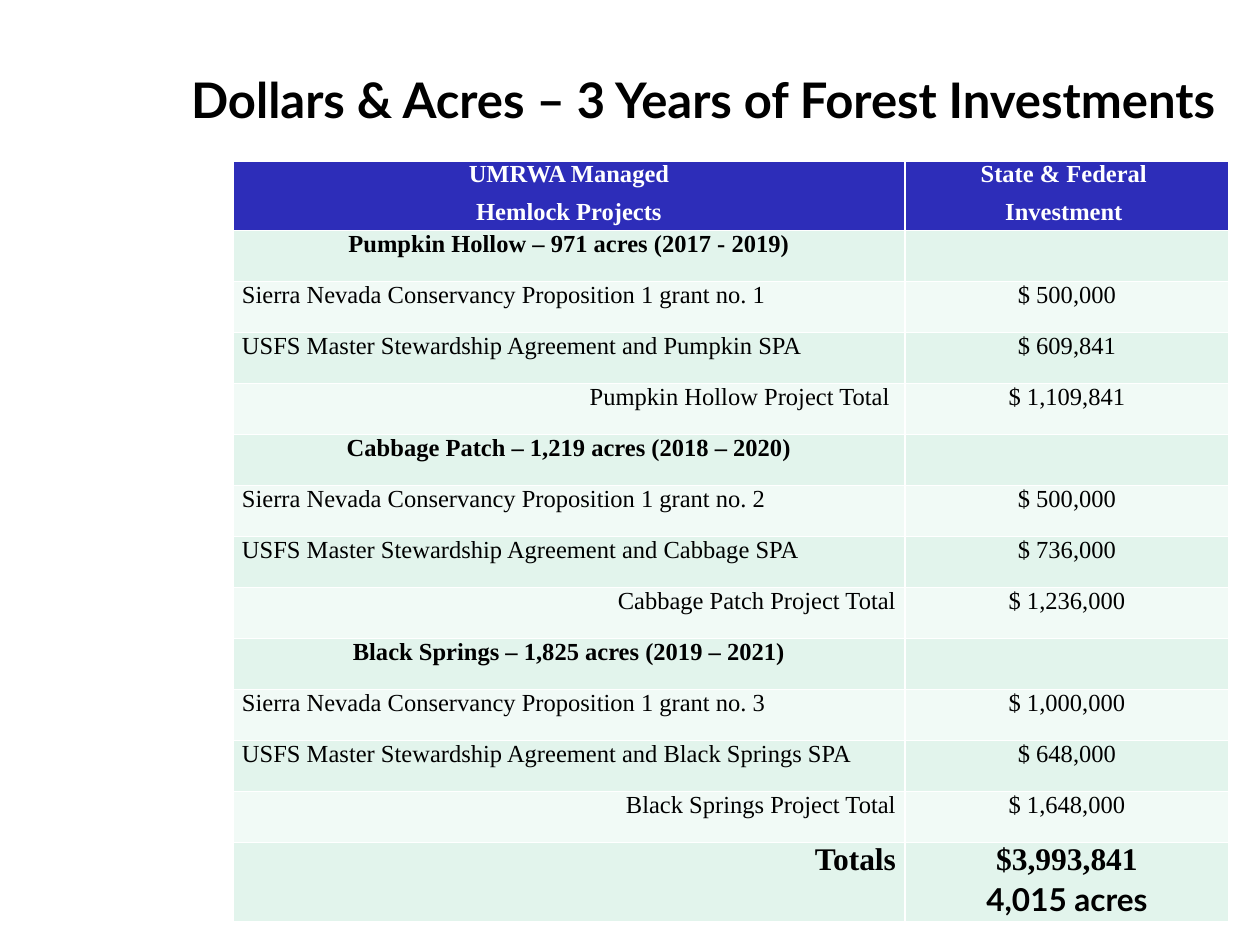
from pptx import Presentation
from pptx.dml.color import RGBColor
from pptx.enum.text import MSO_ANCHOR, PP_ALIGN as ALIGN
from pptx.util import Pt

PX = 914400 // 126
BLACK = RGBColor(0, 0, 0)
WHITE = RGBColor(255, 255, 255)
BLUE = RGBColor(0x2D, 0x2D, 0xB9)
MINT = RGBColor(0xE2, 0xF4, 0xEC)
PALE_MINT = RGBColor(0xF1, 0xFA, 0xF6)
SERIF = "Times New Roman"
SANS = "Lato"

PROJECTS = [
    ("Pumpkin Hollow – 971 acres (2017 - 2019)", "1", "$ 500,000",
     "Pumpkin", "$ 609,841", "Pumpkin Hollow Project Total ", "$ 1,109,841"),
    ("Cabbage Patch – 1,219 acres (2018 – 2020)", "2", "$ 500,000",
     "Cabbage", "$ 736,000", "Cabbage Patch Project Total", "$ 1,236,000"),
    ("Black Springs – 1,825 acres (2019 – 2021)", "3", "$ 1,000,000",
     "Black Springs", "$ 648,000", "Black Springs Project Total", "$ 1,648,000"),
]


def style(paragraph, align, size, bold, color=BLACK, face=SERIF):
    paragraph.alignment = align
    paragraph.font.size = Pt(size)
    paragraph.font.bold = bold
    paragraph.font.color.rgb = color
    paragraph.font.name = face


prs = Presentation()
prs.slide_width = 1260 * PX
prs.slide_height = 945 * PX
slide = prs.slides.add_slide(prs.slide_layouts[6])

title = slide.shapes.add_textbox(33 * PX, 39 * PX, 1206 * PX, 120 * PX).text_frame
title.word_wrap = True
title.vertical_anchor = MSO_ANCHOR.MIDDLE
title.text = "Dollars & Acres – 3 Years of Forest Investments "
style(title.paragraphs[0], ALIGN.RIGHT, 28, True, face=SANS)

rows = [("UMRWA Managed\nHemlock Projects", "State & Federal \nInvestment ",
         ALIGN.CENTER, 14, True)]
for heading, grant, grant_sum, agreement, agreement_sum, total, total_sum in PROJECTS:
    rows += [
        (heading, "", ALIGN.CENTER, 14, True),
        (f"Sierra Nevada Conservancy Proposition 1 grant no. {grant}", grant_sum,
         ALIGN.LEFT, 14, False),
        (f"USFS Master Stewardship Agreement and {agreement} SPA", agreement_sum,
         ALIGN.LEFT, 14, False),
        (total, total_sum, ALIGN.RIGHT, 14, False),
    ]
rows.append(("Totals", "$3,993,841\n4,015 acres", ALIGN.RIGHT, 18, True))

heights = [65] + [51] * 12 + [76]
investments = slide.shapes.add_table(
    len(rows), 2, 233 * PX, 161 * PX, 996 * PX, sum(heights) * PX).table
investments.columns[0].width = 672 * PX
investments.columns[1].width = 324 * PX

for r, (label, amount, align, size, bold) in enumerate(rows):
    investments.rows[r].height = heights[r] * PX
    for c, (text, side) in enumerate([(label, align), (amount, ALIGN.CENTER)]):
        cell = investments.cell(r, c)
        cell.margin_left = cell.margin_right = 9 * PX
        cell.margin_top = cell.margin_bottom = 0
        cell.fill.solid()
        cell.fill.fore_color.rgb = BLUE if r == 0 else MINT if r % 2 else PALE_MINT
        cell.text = text
        for i, paragraph in enumerate(cell.text_frame.paragraphs):
            style(paragraph, side, size, bold, BLACK if r else WHITE)
            if i:
                paragraph.space_before = Pt(2 if r else 6)

acres = investments.cell(len(rows) - 1, 1).text_frame.paragraphs[1]
acres.font.name = SANS

prs.save("out.pptx")
